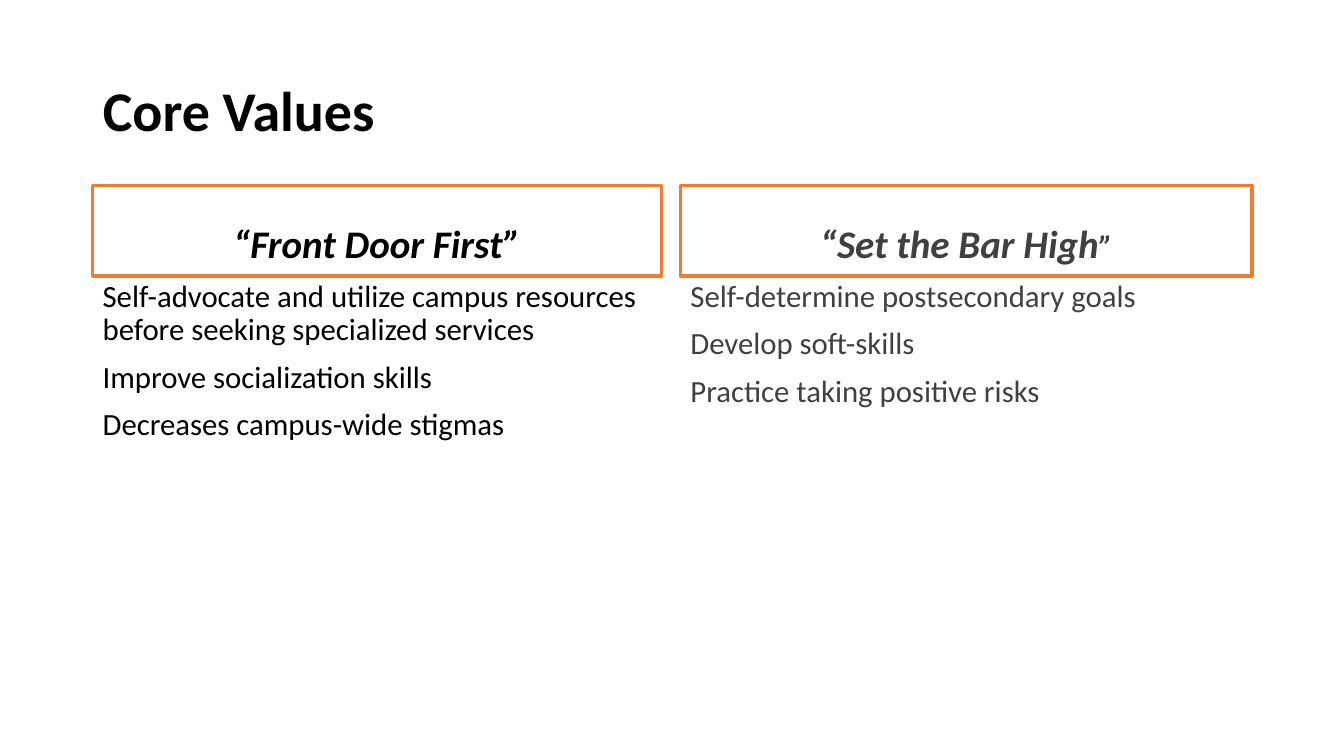
from pptx import Presentation
from pptx.dml.color import RGBColor
from pptx.enum.shapes import MSO_SHAPE
from pptx.enum.text import MSO_ANCHOR, MSO_AUTO_SIZE, PP_ALIGN
from pptx.util import Inches, Pt

RECT = MSO_SHAPE.RECTANGLE
MIDDLE, BOTTOM = MSO_ANCHOR.MIDDLE, MSO_ANCHOR.BOTTOM
LEFT, CENTER = PP_ALIGN.LEFT, PP_ALIGN.CENTER
NO_FIT = MSO_AUTO_SIZE.NONE
COLORS = {"black": "000000", "gray": "404040", "orange": "ED7D31"}


def style(run, size, color, bold=False, italic=False):
    font = run.font
    font.name = "Calibri"
    font.size = Pt(size)
    font.bold = bold
    font.italic = italic
    font.color.rgb = RGBColor.from_string(COLORS[color])


deck = Presentation()
deck.slide_width = Inches(13.33)
deck.slide_height = Inches(7.5)
slide = deck.slides.add_slide(deck.slide_layouts[5])
shapes = slide.shapes

title = shapes.title
title.left, title.top = Inches(0.92), Inches(0.4)
title.width, title.height = Inches(11.5), Inches(1.45)
frame = title.text_frame
frame.text = "Core Values"
frame.auto_size = NO_FIT
frame.vertical_anchor = MIDDLE
line = frame.paragraphs[0]
line.alignment = LEFT
line.line_spacing = 0.9
style(line.runs[0], 40, "black", bold=True)

values = [
    (0.92, 5.64, "black", [("“Front Door First”", 27.9)], [
        "Self-advocate and utilize campus resources before seeking specialized services",
        "Improve socialization skills",
        "Decreases campus-wide stigmas",
    ]),
    (6.75, 5.67, "gray", [("“Set the Bar High", 27.9), ("”", 22.8)], [
        "Self-determine postsecondary goals",
        "Develop soft-skills",
        "Practice taking positive risks",
    ]),
]

for left, width, color, heading, points in values:
    box = shapes.add_shape(RECT, Inches(left), Inches(1.84), Inches(width), Inches(0.9))
    box.shadow.inherit = False
    box.fill.background()
    box.line.color.rgb = RGBColor.from_string(COLORS["orange"])
    box.line.width = Pt(2.5)
    frame = box.text_frame
    frame.word_wrap = True
    frame.vertical_anchor = BOTTOM
    frame.margin_bottom = Inches(0.11)
    line = frame.paragraphs[0]
    line.alignment = CENTER
    line.line_spacing = 0.7
    for words, size in heading:
        run = line.add_run()
        run.text = words
        style(run, size, color, bold=True, italic=True)

    body = shapes.add_textbox(Inches(left), Inches(2.74), Inches(width), Inches(4.03))
    frame = body.text_frame
    frame.word_wrap = True
    frame.auto_size = NO_FIT
    frame.text = "\n".join(points)
    for index, line in enumerate(frame.paragraphs):
        line.line_spacing = 0.9
        line.space_before = Pt(10 if index else 0)
        style(line.runs[0], 22, color)

deck.save("out.pptx")
